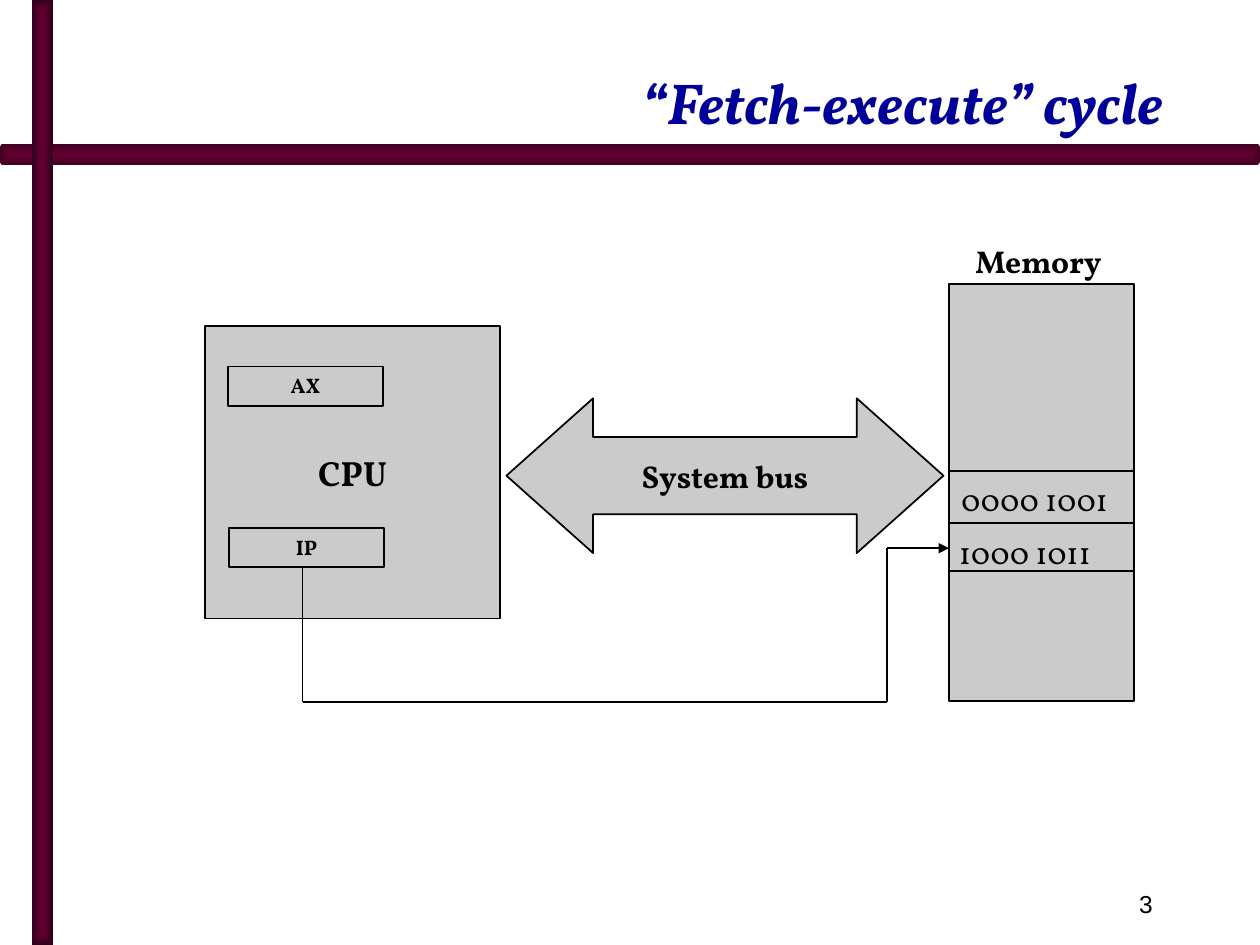
from lxml import etree
from pptx import Presentation
from pptx import util as u
from pptx.dml.color import RGBColor
from pptx.enum import shapes, text
from pptx.oxml import parse_xml
from pptx.oxml.ns import nsdecls, qn

FONT = "Vollkorn"
BLACK = "000000"
GREY = "CBCBCB"
MAROON = "660033"
MEMORY_LEFT, MEMORY_WIDTH = 19.13, 3.73


def cms(*values):
    return [u.Cm(value) for value in values]


def paint(color_format, color):
    color_format.rgb = RGBColor.from_string(color)


def write(box, content, size, align, anchor, bold=True, italic=False,
          font=FONT, color=BLACK):
    frame = box.text_frame
    frame.word_wrap = True
    frame.auto_size = text.MSO_AUTO_SIZE.NONE
    frame.vertical_anchor = anchor
    frame.margin_left = frame.margin_right = u.Cm(0.25)
    frame.margin_top = frame.margin_bottom = u.Cm(0.13)
    frame.text = content
    para = frame.paragraphs[0]
    para.alignment = align
    para.font.name = font
    para.font.size = u.Pt(size)
    para.font.bold = bold
    para.font.italic = italic
    paint(para.font.color, color)


def add_title(page, content):
    title = page.shapes.title
    title.left, title.top, title.width, title.height = cms(2.11, 0.43, 21.59, 2.44)
    write(title, content, 33, text.PP_ALIGN.RIGHT, text.MSO_ANCHOR.BOTTOM,
          italic=True, color="000099")


def add_bar(page, kind, place, edge_color):
    """Add a borderless bar shaded from maroon at its centre to edge_color."""
    bar = page.shapes.add_shape(kind, *cms(*place))
    bar.shadow.inherit = False
    bar.line.fill.background()
    bar.fill.gradient()
    for stop, color in zip(bar.fill.gradient_stops, (MAROON, edge_color)):
        paint(stop.color, color)
    gradient = bar._element.spPr.find(qn("a:gradFill"))
    gradient.replace(gradient.find(qn("a:lin")), parse_xml(
        f'<a:path {nsdecls("a")} path="shape">'
        '<a:fillToRect l="50000" t="50000" r="50000" b="50000"/></a:path>'))
    return bar


def add_block(page, kind, place, fill=GREY):
    block = page.shapes.add_shape(kind, *cms(*place))
    block.shadow.inherit = False
    if fill:
        block.fill.solid()
        paint(block.fill.fore_color, fill)
    else:
        block.fill.background()
    paint(block.line.color, BLACK)
    block.line.width = u.Pt(1)
    return block


def add_register(page, name, left, top):
    register = add_block(page, shapes.MSO_SHAPE.RECTANGLE, (left, top, 3.12, 0.79), None)
    write(register, name, 12, text.PP_ALIGN.CENTER, text.MSO_ANCHOR.TOP)


def add_label(page, content, place, size=18, align=text.PP_ALIGN.LEFT,
              anchor=text.MSO_ANCHOR.TOP, bold=False, font=FONT):
    label = page.shapes.add_textbox(*cms(*place))
    write(label, content, size, align, anchor, bold, font=font)


def add_line(page, start, end, arrow=False):
    line = page.shapes.add_connector(shapes.MSO_CONNECTOR.STRAIGHT, *cms(*start, *end))
    paint(line.line.color, BLACK)
    line.line.width = u.Pt(1)
    if arrow:
        etree.SubElement(line.line._get_or_add_ln(), qn("a:tailEnd"), type="triangle")
    etree.SubElement(line._element.spPr, qn("a:effectLst"))


def add_cpu(page):
    cpu = add_block(page, shapes.MSO_SHAPE.RECTANGLE, (4.14, 6.58, 5.94, 5.89))
    write(cpu, "CPU", 20, text.PP_ALIGN.CENTER, text.MSO_ANCHOR.MIDDLE)
    add_register(page, "AX", 4.6, 7.39)
    add_register(page, "IP", 4.62, 10.64)


def add_bus(page):
    bus = add_block(page, shapes.MSO_SHAPE.LEFT_RIGHT_ARROW, (10.21, 8.03, 8.81, 3.12))
    bus.adjustments[0], bus.adjustments[1] = 0.5, 0.56
    write(bus, "System bus", 18, text.PP_ALIGN.CENTER, text.MSO_ANCHOR.MIDDLE)


def add_memory(page):
    add_block(page, shapes.MSO_SHAPE.RECTANGLE, (MEMORY_LEFT, 5.72, MEMORY_WIDTH, 8.41))
    add_label(page, "Memory", (18.8, 4.75, 4.27, 1.02),
              align=text.PP_ALIGN.CENTER, bold=True)
    for top in (9.5, 10.54, 11.51):
        add_line(page, (MEMORY_LEFT, top), (MEMORY_LEFT + MEMORY_WIDTH, top))
    for content, left, top in (("0000 1001", 19.13, 9.55), ("1000 1011", 19.08, 10.62)):
        add_label(page, content, (left, top, 4.29, 1.02))


def add_pointer(page):
    """Trace the path from the IP register to the memory cell it addresses."""
    corners = [(6.1, 11.46), (6.1, 14.15), (17.88, 14.15), (17.88, 11.05),
               (MEMORY_LEFT, 11.05)]
    for start, end in zip(corners, corners[1:]):
        add_line(page, start, end, arrow=end == corners[-1])


def main():
    deck = Presentation()
    deck.slide_width, deck.slide_height = cms(25.4, 19.05)
    page = deck.slides.add_slide(deck.slide_layouts[5])
    across = add_bar(page, shapes.MSO_SHAPE.ROUNDED_RECTANGLE, (0, 2.9, 25.4, 0.43), "410020")
    across.adjustments[0] = 0.17
    add_bar(page, shapes.MSO_SHAPE.RECTANGLE, (0.64, 0, 0.43, 19.05), "2F0018")
    add_title(page, "“Fetch-execute” cycle")
    add_cpu(page)
    add_bus(page)
    add_memory(page)
    add_pointer(page)
    add_label(page, "3", (18.21, 17.58, 5.28, 1.27), 14, text.PP_ALIGN.RIGHT,
              text.MSO_ANCHOR.MIDDLE, font="Arial")
    deck.save("out.pptx")


if __name__ == "__main__":
    main()
